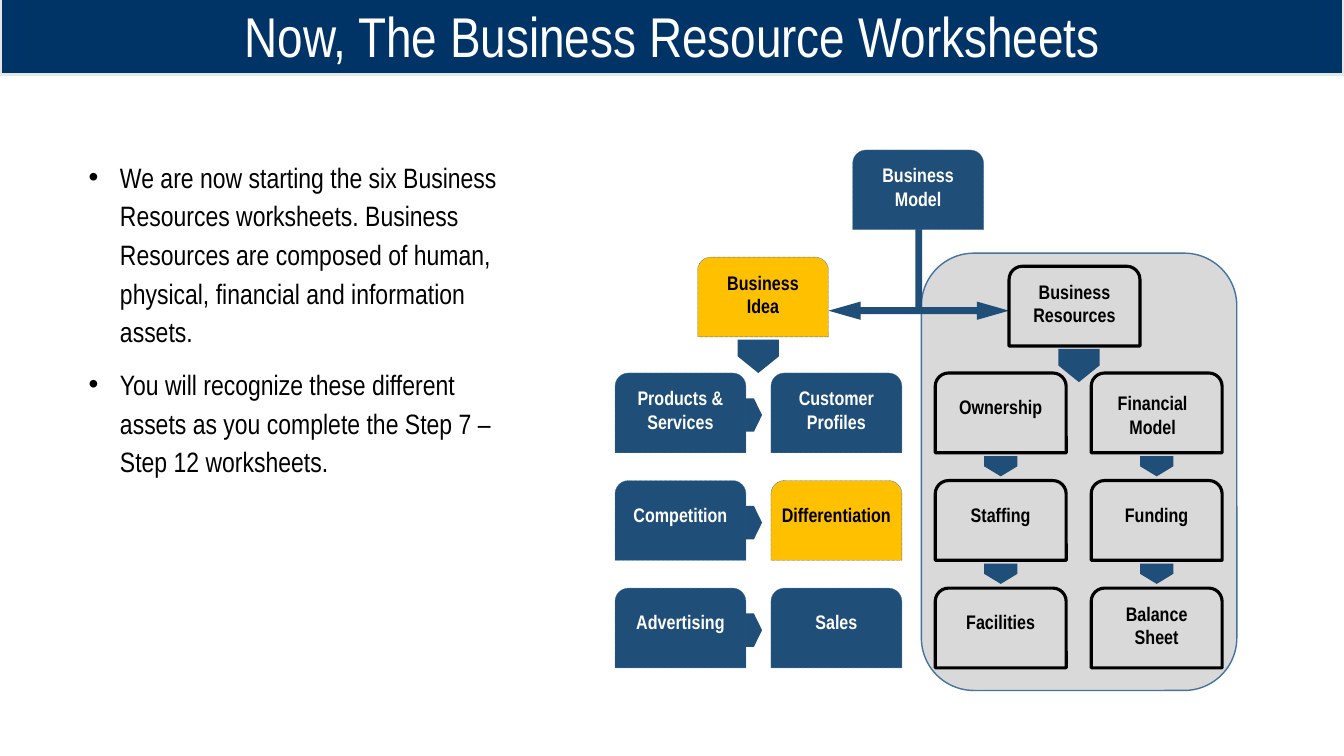
from dataclasses import dataclass

from pptx import Presentation
from pptx.dml.color import RGBColor
from pptx.enum.dml import MSO_LINE
from pptx.enum.shapes import MSO_SHAPE
from pptx.enum.text import MSO_ANCHOR, MSO_AUTO_SIZE, PP_ALIGN
from pptx.util import Cm, Pt

CARD, PANEL, PLATE = MSO_SHAPE.ROUND_2_SAME_RECTANGLE, MSO_SHAPE.ROUNDED_RECTANGLE, MSO_SHAPE.PENTAGON
FORK = MSO_SHAPE.LEFT_RIGHT_UP_ARROW
DOTTED = MSO_LINE.ROUND_DOT
CENTER, LEFT = PP_ALIGN.CENTER, PP_ALIGN.LEFT
MIDDLE, BOTTOM = MSO_ANCHOR.MIDDLE, MSO_ANCHOR.BOTTOM
NO_AUTOFIT = MSO_AUTO_SIZE.NONE


@dataclass(frozen=True)
class Theme:
    font: str = "Arial Narrow"
    title_size: int = 40
    body_size: int = 20
    card_size: int = 14
    navy: RGBColor = RGBColor(0x00, 0x33, 0x66)
    blue: RGBColor = RGBColor(0x1F, 0x4E, 0x79)
    edge: RGBColor = RGBColor(0x43, 0x73, 0x9E)
    gold: RGBColor = RGBColor(0xFF, 0xC0, 0x00)
    gray: RGBColor = RGBColor(0xD9, 0xD9, 0xD9)
    pale: RGBColor = RGBColor(0xE7, 0xE6, 0xE6)
    black: RGBColor = RGBColor(0, 0, 0)
    white: RGBColor = RGBColor(0xFF, 0xFF, 0xFF)


theme = Theme()
deck = Presentation()
deck.slide_width, deck.slide_height = Cm(33.87), Cm(19.05)
page = deck.slides.add_slide(deck.slide_layouts[1])


def add_filled(kind, left, top, width, height, fill):
    """Add a flat preset shape without outline, measured in centimetres; fill None is see-through."""
    shape = page.shapes.add_shape(kind, Cm(left), Cm(top), Cm(width), Cm(height))
    shape.shadow.inherit = False
    shape.line.fill.background()
    if fill is None:
        shape.fill.background()
    else:
        shape.fill.solid()
        shape.fill.fore_color.rgb = fill
    return shape


def write(para, text, size, color, bold=False, align=CENTER):
    para.alignment = align
    span = para.add_run()
    span.text = text
    span.font.name, span.font.size, span.font.bold = theme.font, Pt(size), bold
    span.font.color.rgb = color


# Title bar
title = page.shapes.title
title.left, title.top, title.width, title.height = Cm(0), Cm(-0.05), Cm(33.87), Cm(1.93)
title.fill.solid()
title.fill.fore_color.rgb = theme.navy
title.line.color.rgb, title.line.width = theme.pale, Pt(2.25)
title.text_frame.auto_size = NO_AUTOFIT
title.text_frame.vertical_anchor = BOTTOM
heading = title.text_frame.paragraphs[0]
heading.line_spacing = 0.9
write(heading, "Now, The Business Resource Worksheets", theme.title_size, theme.white)

# Bullet list
body = page.placeholders[1]
body.left, body.top, body.width, body.height = Cm(1.88), Cm(3.78), Cm(10.92), Cm(10.59)
body.text_frame.auto_size = NO_AUTOFIT
points = [
    "We are now starting the six Business Resources worksheets. Business Resources "
    "are composed of human, physical, financial and information assets.",
    "You will recognize these different assets as you complete the Step 7 – Step 12 worksheets.",
]
for index, point in enumerate(points):
    para = body.text_frame.add_paragraph() if index else body.text_frame.paragraphs[0]
    write(para, point, theme.body_size, theme.black, align=LEFT)
    para.line_spacing, para.space_before, para.space_after = 1.15, Pt(0), Pt(10)
    properties = para._p.get_or_add_pPr()
    properties.set("marL", str(Cm(0.89)))
    properties.set("indent", str(Cm(-0.79)))

# Panel behind the resources, and the three-way arrow
panel = add_filled(PANEL, 23.22, 6.38, 7.95, 11.02, theme.gray)
panel.line.color.rgb, panel.line.width = theme.edge, Pt(1)
fork = add_filled(FORK, 20.88, 4.83, 4.55, 3.23, theme.blue)
for index, ratio in enumerate((0.054, 0.071, 0.25)):
    fork.adjustments[index] = ratio

# Cards: the four columns and three rows of worksheets, below three headings
CARD_WIDTH, CARD_HEIGHT = 3.3, 2.01
columns = [15.5, 19.43, 23.57, 27.5]
rows = [9.4 + 2.71 * step for step in range(3)]
worksheets = [
    ["Products &\nServices", "Customer\nProfiles", "Ownership", "Financial\nModel"],
    ["Competition", "Differentiation", "Staffing", "Funding"],
    ["Advertising", "Sales", "Facilities", "Balance\nSheet"],
]
styles = {
    "plain": (theme.blue, theme.white),
    "accent": (theme.gold, theme.black),
    "resource": (None, theme.black),
}
cards = [
    ("Business\nModel", 21.49, 3.78, "plain"),
    ("Business\nIdea", 17.58, 6.48, "accent"),
    ("Business\nResources", 25.43, 6.71, "resource"),
]
for top, names in zip(rows, worksheets):
    for column, (left, name) in enumerate(zip(columns, names)):
        style = "resource" if column > 1 else "accent" if name == "Differentiation" else "plain"
        cards.append((name, left, top, style))

for name, left, top, style in cards:
    fill, ink = styles[style]
    card = add_filled(CARD, left, top, CARD_WIDTH, CARD_HEIGHT, fill)
    if style == "resource":
        card.line.color.rgb, card.line.width = theme.black, Pt(2.25)
    else:
        card.line.color.rgb, card.line.width = theme.edge, Pt(0.25)
        card.line.dash_style = DOTTED
    frame = card.text_frame
    frame.vertical_anchor = MIDDLE
    frame.margin_left = frame.margin_right = frame.margin_top = Cm(0)
    lines = name.split("\n")
    frame.margin_bottom = Cm(0.25 if len(lines) > 1 else 0.4)
    if name == "Financial\nModel":
        frame.margin_bottom, frame.margin_right = Cm(0), Cm(0.2)
    for index, line in enumerate(lines):
        para = frame.add_paragraph() if index else frame.paragraphs[0]
        write(para, line, theme.card_size, ink, bold=True)

# Pointers: centre, length, breadth and rotation
pointers = [(19.11, 8.98, 0.84, 1.04, 90), (27.19, 9.21, 0.84, 1.04, 90)]
for top in rows:
    pointers.append((columns[0] + CARD_WIDTH + 0.2, top + 1.06, 0.41, 0.84, 0))
for top in rows[:2]:
    for left in columns[2:]:
        pointers.append((left + CARD_WIDTH / 2, top + 2.35, 0.51, 0.84, 90))
for center_x, center_y, length, breadth, rotation in pointers:
    pointer = add_filled(PLATE, center_x - length / 2, center_y - breadth / 2, length, breadth, theme.blue)
    pointer.rotation = rotation

deck.save("out.pptx")
